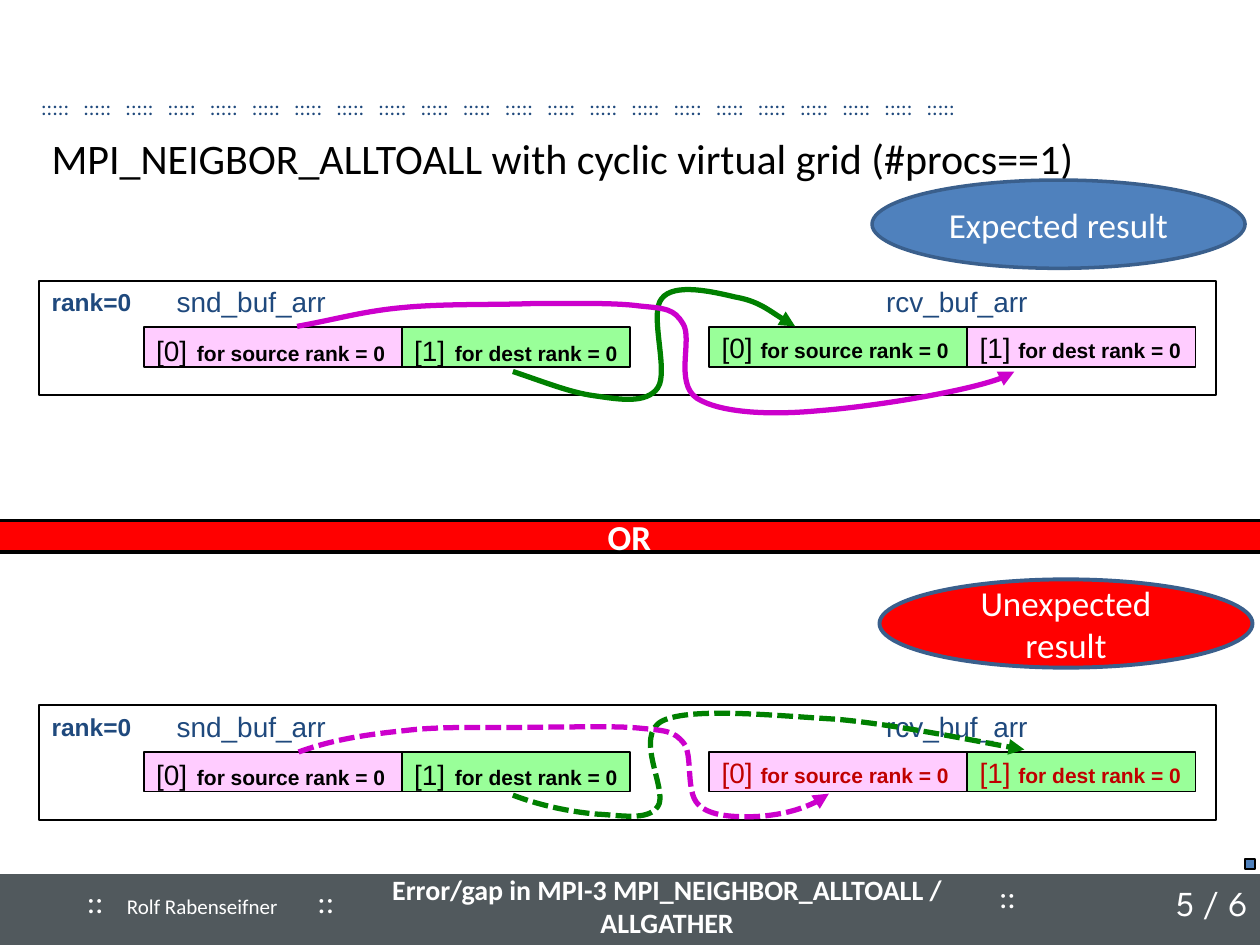
from lxml import etree
from pptx import Presentation
from pptx.dml.color import RGBColor
from pptx.enum.dml import MSO_LINE
from pptx.enum.shapes import MSO_SHAPE
from pptx.enum.text import MSO_ANCHOR, PP_ALIGN
from pptx.oxml.ns import qn
from pptx.util import Cm, Pt

RECT, OVAL = MSO_SHAPE.RECTANGLE, MSO_SHAPE.OVAL
TOP, MIDDLE = MSO_ANCHOR.TOP, MSO_ANCHOR.MIDDLE
LEFT, CENTER, RIGHT = PP_ALIGN.LEFT, PP_ALIGN.CENTER, PP_ALIGN.RIGHT
SOLID, DASHED = MSO_LINE.SOLID, MSO_LINE.SQUARE_DOT

BLACK, WHITE, NAVY = "000000", "FFFFFF", "1F497D"
RED, DARK_RED, SLATE = "FF0000", "C00000", "51595D"
BLUE, BLUE_EDGE = "4F81BD", "3A5F8C"
PINK, MINT, GREEN, MAGENTA = "FFCCFF", "99FF99", "008000", "CC00CC"

DOT_GROUPS, DOT_PITCH = 22, 0.85
FOOTER_BAR = (0, 17.65, 25.4, 1.4)
FOOTER_DOTS = [(1.5, 17.65), (6.15, 17.65), (19.89, 17.55)]
LABELS = [
    ("5 / 6", (20.45, 17.65, 4.95, 1.09), 20, WHITE, RIGHT, TOP,
     {"name": "League Spartan"}),
    ("Rolf Rabenseifner", (2.31, 17.75, 3.73, 1.02), 12, WHITE, LEFT, MIDDLE, {}),
    ("MPI_NEIGBOR_ALLTOALL with cyclic virtual grid (#procs==1)",
     (0.79, 2.59, 24, 1.17), 24, BLACK, LEFT, MIDDLE, {}),
    ("Error/gap in MPI-3 MPI_NEIGHBOR_ALLTOALL / ALLGATHER",
     (6.78, 17.75, 13.34, 1.02), 16, WHITE, CENTER, MIDDLE, {"bold": True}),
]
CALLOUTS = [
    ("OR", RECT, (-0.33, 10.49, 26.04, 0.64), RED, BLACK, 2, True),
    ("Expected result", OVAL, (17.58, 3.63, 7.52, 1.78), BLUE, BLUE_EDGE, 2, False),
    ("Unexpected result", OVAL, (17.73, 11.68, 7.52, 1.78), RED, BLUE_EDGE, 2.25, False),
]
MARKER = (25.1, 17.32, 0.2, 0.2)

FRAME_LEFT, FRAME_WIDTH, FRAME_HEIGHT = 0.79, 23.72, 2.31
CELL_DROP, CELL_HEIGHT = 0.94, 0.8
CELLS = [("[0]", "for source rank = 0", 5.2), ("[1]", "for dest rank = 0", 4.6)]
BUFFERS = [
    ("rcv_buf_arr", 14.3, (17.6, 3.38), 16),
    ("snd_buf_arr", 2.9, (3.3, 3.53), 20),
]
PANELS = [
    {"top": 5.66, "dash": SOLID,
     "rcv_buf_arr": ((MINT, PINK), BLACK), "snd_buf_arr": ((PINK, MINT), BLACK),
     "arrows": [
         (GREEN, [(10.34, 7.49), (10.97, 7.7), (11.51, 7.92), (11.99, 7.98),
                  (12.47, 8.05), (13.03, 8.15), (13.26, 7.82),
                  (13.49, 7.49), (13.08, 6.32), (13.34, 6.02),
                  (13.59, 5.69), (14.4, 5.89), (14.83, 5.99),
                  (15.29, 6.07), (15.7, 6.4), (16.03, 6.58)]),
         (MAGENTA, [(5.99, 6.58), (6.81, 6.43), (7.34, 6.27), (8.13, 6.2),
                    (8.94, 6.12), (9.96, 6.15), (10.74, 6.12),
                    (11.56, 6.12), (12.4, 6.1), (12.9, 6.17),
                    (13.41, 6.22), (13.59, 6.22), (13.77, 6.53),
                    (13.97, 6.83), (13.59, 7.72), (14.05, 8.03),
                    (14.5, 8.31), (15.44, 8.38), (16.51, 8.28),
                    (17.58, 8.2), (20.09, 7.8), (20.45, 7.49)])]},
    {"top": 14.22, "dash": DASHED,
     "rcv_buf_arr": ((PINK, MINT), DARK_RED), "snd_buf_arr": ((PINK, MINT), BLACK),
     "arrows": [
         (GREEN, [(10.34, 16.03), (10.95, 16.26), (11.51, 16.36), (11.99, 16.41),
                  (12.5, 16.43), (13.06, 16.56), (13.26, 16.26),
                  (13.49, 15.95), (12.75, 14.83), (13.36, 14.53),
                  (13.94, 14.25), (15.65, 14.43), (16.87, 14.5),
                  (18.08, 14.61), (20.27, 15.06), (20.65, 15.11)]),
         (MAGENTA, [(6.02, 15.16), (6.71, 14.91), (7.37, 14.81), (8.15, 14.73),
                    (8.94, 14.63), (9.98, 14.68), (10.77, 14.66),
                    (11.56, 14.66), (12.42, 14.63), (12.9, 14.68),
                    (13.41, 14.73), (13.59, 14.73), (13.79, 14.99),
                    (13.97, 15.24), (13.82, 15.95), (14.07, 16.21),
                    (14.3, 16.46), (14.83, 16.48), (15.27, 16.46),
                    (15.72, 16.43), (16.38, 16.28), (16.71, 16)])]},
]


def rgb(value):
    return RGBColor.from_string(value)


def write(shape, runs, color, align=LEFT, anchor=TOP, wrap=True):
    frame = shape.text_frame
    frame.word_wrap = wrap
    frame.vertical_anchor = anchor
    paragraph = frame.paragraphs[0]
    paragraph.alignment = align
    for text, size, formats in runs:
        run = paragraph.add_run()
        run.text = text
        run.font.size = Pt(size)
        run.font.color.rgb = rgb(color)
        for key, value in ({"name": "Calibri"} | formats).items():
            setattr(run.font, key, value)
    return paragraph


def add_label(shapes, box, runs, color, **layout):
    return write(shapes.add_textbox(*map(Cm, box)), runs, color, **layout)


def outline(shape, fill, line, width):
    shape.shadow.inherit = False
    if fill:
        shape.fill.solid()
        shape.fill.fore_color.rgb = rgb(fill)
    else:
        shape.fill.background()
    shape.line.color.rgb = rgb(line)
    shape.line.width = Pt(width)


def add_block(shapes, kind, box, fill, line, width):
    shape = shapes.add_shape(kind, *map(Cm, box))
    outline(shape, fill, line, width)
    return shape


def add_curved_arrow(shapes, points, color, dash):
    start, *rest = [(Cm(x), Cm(y)) for x, y in points]
    builder = shapes.build_freeform(*start)
    builder.add_line_segments(rest, close=False)
    arrow = builder.convert_to_shape()
    outline(arrow, None, color, 3)
    arrow.line.dash_style = dash
    segments = list(arrow._element.iter(qn("a:lnTo")))
    for first in range(0, len(segments), 3):
        curve = etree.SubElement(segments[first].getparent(), qn("a:cubicBezTo"))
        for segment in segments[first:first + 3]:
            curve.append(segment[0])
            segment.getparent().remove(segment)
    etree.SubElement(arrow.line._get_or_add_ln(), qn("a:tailEnd"), type="triangle")


def add_panel(shapes, panel):
    top = panel["top"]
    arial, bold = {"name": "Arial"}, {"name": "Arial", "bold": True}
    for title, left, (title_left, title_width), gap_size in BUFFERS:
        fills, color = panel[title]
        for (index, purpose, width), fill in zip(CELLS, fills):
            cell = add_block(shapes, RECT, (left, top + CELL_DROP, width, CELL_HEIGHT),
                             fill, BLACK, 1)
            write(cell, [(index, 16, arial), (" ", gap_size, arial), (purpose, 12, bold)],
                  color, anchor=MIDDLE, wrap=False)
            left += width
        add_label(shapes, (title_left, top - 0.05, title_width, 0.94),
                  [(title, 16, arial)], NAVY, align=CENTER, wrap=False)
    frame = add_block(shapes, RECT, (FRAME_LEFT, top, FRAME_WIDTH, FRAME_HEIGHT),
                      None, BLACK, 1)
    write(frame, [("rank=0", 14, bold)], NAVY, wrap=False)
    for color, points in panel["arrows"]:
        add_curved_arrow(shapes, points, color, panel["dash"])


def main():
    deck = Presentation()
    deck.slide_width, deck.slide_height = Cm(25.4), Cm(19.05)
    shapes = deck.slides.add_slide(deck.slide_layouts[6]).shapes

    add_block(shapes, RECT, FOOTER_BAR, SLATE, SLATE, 2)
    for left, top in FOOTER_DOTS:
        add_label(shapes, (left, top, 1.04, 0.97), [("::", 18, {})], WHITE)
    dots = add_label(shapes, (0.58, 1.78, 22.81, 0.76),
                     [("\t".join([":::::"] * DOT_GROUPS), 12, {})], NAVY)
    tabs = etree.SubElement(dots._p.get_or_add_pPr(), qn("a:tabLst"))
    for stop in range(1, DOT_GROUPS):
        etree.SubElement(tabs, qn("a:tab"), pos=str(Cm(stop * DOT_PITCH)), algn="l")
    for text, box, size, color, align, anchor, formats in LABELS:
        add_label(shapes, box, [(text, size, formats)], color, align=align, anchor=anchor)
    for panel in PANELS:
        add_panel(shapes, panel)
    for text, kind, box, fill, line, width, bold in CALLOUTS:
        write(add_block(shapes, kind, box, fill, line, width),
              [(text, 20, {"bold": bold})], WHITE, align=CENTER, anchor=MIDDLE)
    add_block(shapes, RECT, MARKER, BLUE, BLACK, 1)
    deck.save("out.pptx")


if __name__ == "__main__":
    main()
